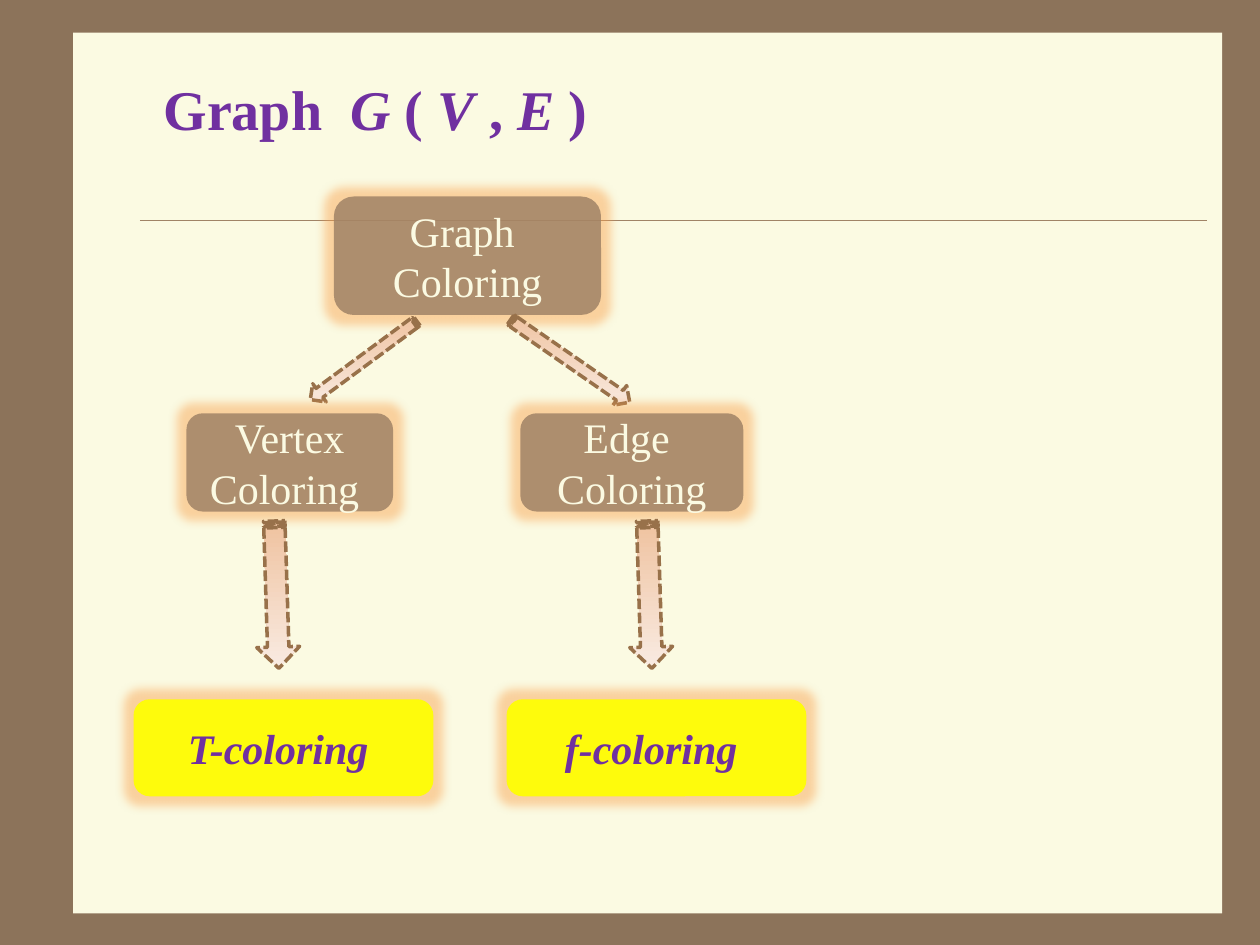
import pptx
import pptx.dml.color
import pptx.enum.dml
import pptx.enum.shapes
import pptx.enum.text
import pptx.oxml
import pptx.oxml.ns
import pptx.util

WIDE, HIGH = 10, 7.5
FONT = "Times New Roman"
CREAM, TAN, BROWN = "FBFAE2", "A08366", "98714A"
PURPLE, YELLOW = "7030A0", "FFFF00"
KIND = pptx.enum.shapes.MSO_SHAPE
NAMES = pptx.oxml.ns.nsdecls("a")


def hue(text):
    """Turn a hex string into a colour."""
    return pptx.dml.color.RGBColor.from_string(text)


def place(*parts):
    """Turn lengths in inches into slide units."""
    return [pptx.util.Inches(part) for part in parts]


def fade(fill, share):
    """Give a solid fill an opacity in percent."""
    tone = fill._xPr.find(".//" + pptx.oxml.ns.qn("a:srgbClr"))
    tone.append(pptx.oxml.parse_xml(f'<a:alpha {NAMES} val="{share * 1000}"/>'))


def form(slide, kind, area, fill=None):
    """Add a preset shape without shadow or outline."""
    shape = slide.shapes.add_shape(kind, *place(*area))
    shape.shadow.inherit = False
    shape.line.fill.background()
    if fill:
        shape.fill.solid()
        shape.fill.fore_color.rgb = hue(fill)
    return shape


def write(shape, runs, size, color, bold=False, center=True):
    """Write (text, italic) runs into a shape."""
    frame = shape.text_frame
    frame.word_wrap = True
    frame.vertical_anchor = pptx.enum.text.MSO_ANCHOR.MIDDLE
    line = frame.paragraphs[0]
    align = pptx.enum.text.PP_ALIGN
    line.alignment = align.CENTER if center else align.LEFT
    for text, slant in runs:
        run = line.add_run()
        run.text = text
        font = run.font
        font.name, font.size = FONT, pptx.util.Pt(size)
        font.bold, font.italic = bold, slant
        font.color.rgb = hue(color)


def node(slide, text, area, leaf=False):
    """Add a glowing rounded box of the tree."""
    shape = form(slide, KIND.ROUNDED_RECTANGLE, area, YELLOW if leaf else TAN)
    fade(shape.fill, 92 if leaf else 85)
    props = shape._element.spPr
    glow = pptx.oxml.parse_xml(
        f'<a:glow {NAMES} rad="139700"><a:srgbClr val="F9A04B">'
        '<a:alpha val="45000"/></a:srgbClr></a:glow>')
    props.find(pptx.oxml.ns.qn("a:effectLst")).append(glow)
    write(shape, [(text, leaf)], 24, PURPLE if leaf else CREAM, leaf)


def arrow(slide, area, turn):
    """Add a dashed striped arrow with a downward gradient."""
    shape = form(slide, KIND.STRIPED_RIGHT_ARROW, area)
    shape.rotation = turn
    shape.fill.gradient()
    shape.fill.gradient_angle = 270
    for stop, tone in zip(shape.fill.gradient_stops, ("EFC29F", "F9EBE2")):
        stop.color.rgb = hue(tone)
    grad = shape._element.spPr.find(pptx.oxml.ns.qn("a:gradFill"))
    grad.set("rotWithShape", "0")
    shape.line.color.rgb = hue(BROWN)
    shape.line.width = pptx.util.Pt(2)
    shape.line.dash_style = pptx.enum.dml.MSO_LINE.SQUARE_DOT


def rule(slide, left, right, top):
    """Add the thin line under the title."""
    line = slide.shapes.add_connector(
        pptx.enum.shapes.MSO_CONNECTOR.STRAIGHT, *place(left, top, right, top))
    line.line.color.rgb = hue(TAN)
    line.line.width = pptx.util.Pt(0.25)
    line._element.spPr.append(pptx.oxml.parse_xml(f"<a:effectLst {NAMES}/>"))


def main():
    """Build the graph colouring slide."""
    deck = pptx.Presentation()
    deck.slide_width, deck.slide_height = place(WIDE, HIGH)
    slide = deck.slides.add_slide(deck.slide_layouts[6])
    slide.background.fill.solid()
    slide.background.fill.fore_color.rgb = hue("8C735A")
    form(slide, KIND.RECTANGLE, (0.58, 0.26, 9.12, 6.99), CREAM)
    rule(slide, 1.11, 9.58, 1.75)

    title = slide.shapes.add_textbox(*place(1.2, 0.3, 8.2, 1.11))
    runs = [("Graph  ", False), ("G", True), (" ( ", False), ("V", True),
            (" , ", False), ("E", True), (" )", False)]
    write(title, runs, 32, PURPLE, True, False)

    node(slide, "Graph  Coloring", (2.65, 1.56, 2.12, 0.94))
    arrow(slide, (2.36, 2.77, 1.05, 0.18), 143.6)
    arrow(slide, (3.95, 2.77, 1.15, 0.19), 34.7)

    columns = [(1.06, 1.48, 1.64, "Vertex Coloring ", "T-coloring "),
               (4.02, 4.13, 1.77, "Edge  Coloring", "f-coloring ")]
    for left, inner, width, name, leaf in columns:
        node(slide, name, (inner, 3.28, width, 0.78))
        arrow(slide, (left + 0.55, 4.55, 1.17, 0.34), 88.2)
        node(slide, leaf, (left, 5.55, 2.38, 0.77), True)
    deck.save("out.pptx")


if __name__ == "__main__":
    main()
